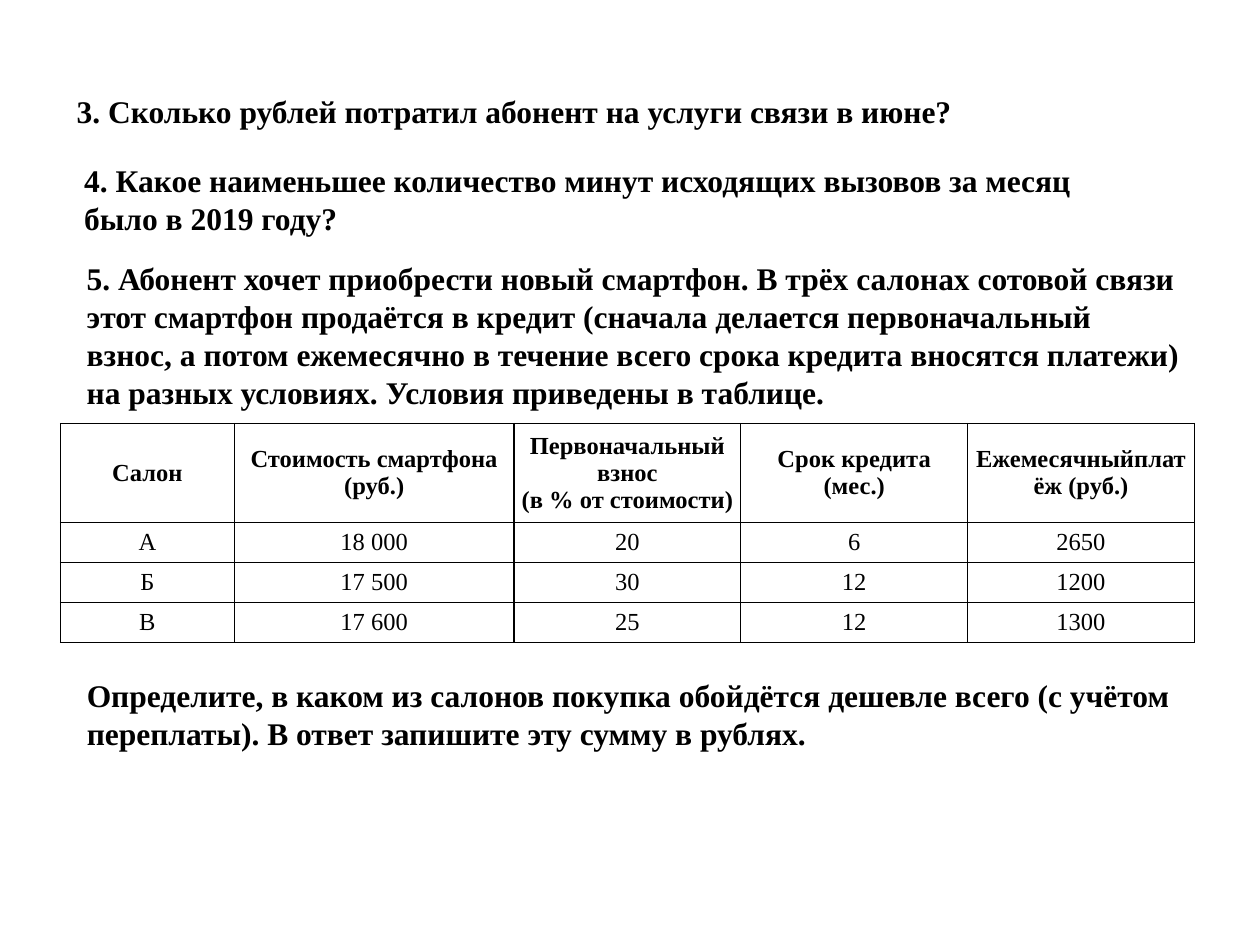
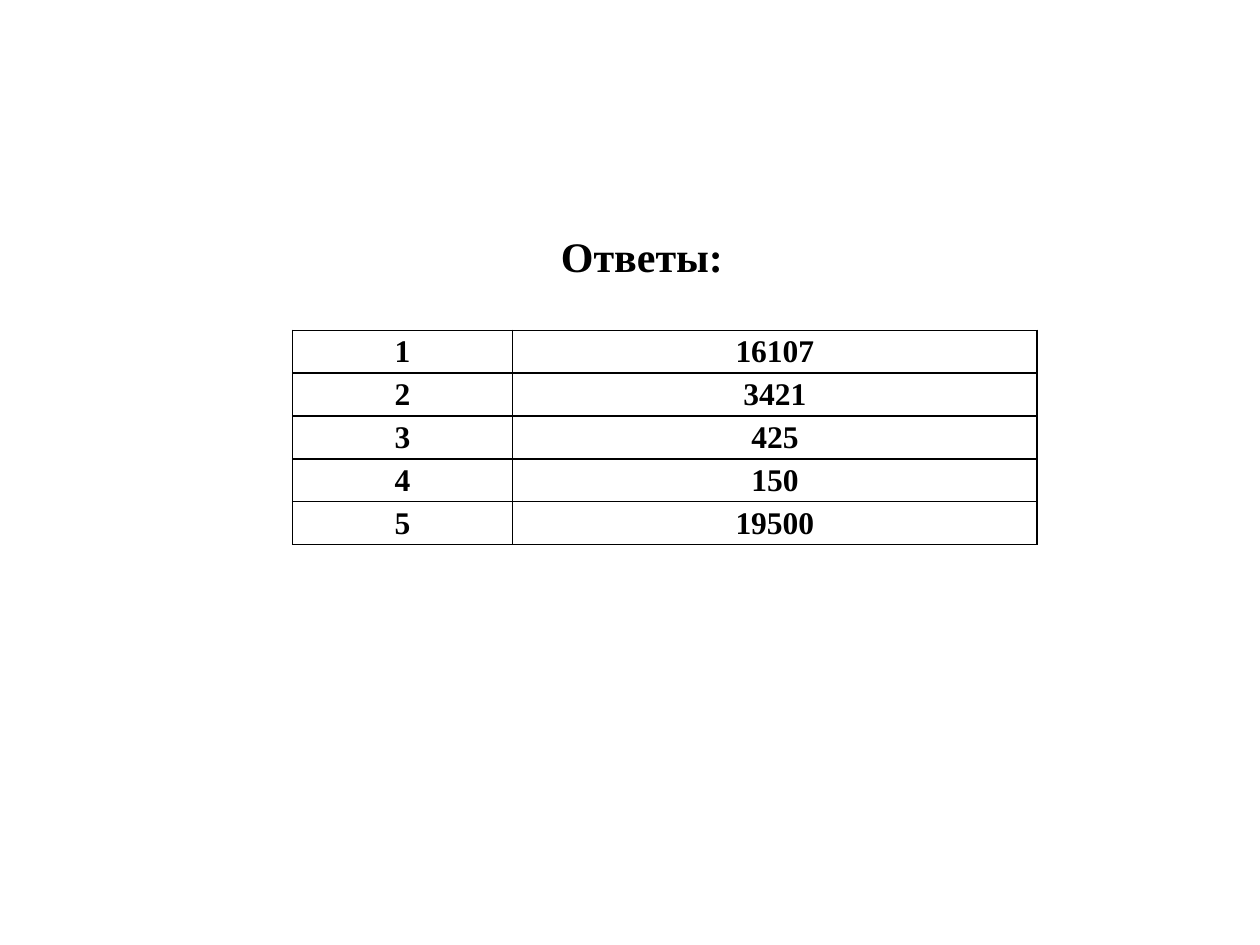
from dataclasses import dataclass

from lxml.etree import SubElement
from pptx import Presentation
from pptx.dml.color import RGBColor
from pptx.enum.text import MSO_ANCHOR as Anchor
from pptx.enum.text import MSO_AUTO_SIZE as AutoSize
from pptx.enum.text import PP_ALIGN as Align
from pptx.oxml.ns import qn
from pptx.util import Inches, Length, Pt

COLORS = {"ink": "000000", "paper": "FFFFFF"}
FONT = "Times New Roman"
SLIDE_WIDTH, SLIDE_HEIGHT = Inches(10), Inches(7.5)
TITLE_ONLY, BLANK = 5, 6
BORDER_WIDTH = Pt(0.75)


@dataclass(frozen=True)
class TextBlock:
    """Text with its place in percent of the slide's width and height."""
    text: str
    left: float
    top: float
    width: float
    height: float
    size: int = 18
    align: Align = Align.LEFT


@dataclass(frozen=True)
class Grid:
    """Table with its place, columns and rows in percent of the slide."""
    left: float
    top: float
    columns: list[float]
    row_heights: list[float]
    cells: list[list[str]]
    size: int
    inset: float
    bold_rows: int


QUESTIONS = [
    TextBlock("3. Сколько рублей потратил абонент на услуги связи в июне?",
              5.1, 9.07, 89, 5.33),
    TextBlock("4. Какое наименьшее количество минут исходящих вызовов за месяц "
              "было в 2019 году?", 5.7, 16.4, 85, 9.47),
    TextBlock("5. Абонент хочет приобрести новый смартфон. В трёх салонах сотовой "
              "связи этот смартфон продаётся в кредит (сначала делается "
              "первоначальный взнос, а потом ежемесячно в течение всего срока "
              "кредита вносятся платежи) на разных условиях. Условия приведены "
              "в таблице.", 5.9, 26.8, 89, 17.47),
    TextBlock("Определите, в каком из салонов покупка обойдётся дешевле всего "
              "(с учётом переплаты). В ответ запишите эту сумму в рублях.",
              5.9, 70.93, 89.8, 9.47),
]
LOAN_TERMS = Grid(
    4.8, 44.8, [13.8, 22.2, 18, 18, 18], [10.5] + [4.23] * 3,
    [["Салон", "Стоимость смартфона\v(руб.)",
      "Первоначальный взнос\v(в % от стоимости)",
      "Срок кредита\v(мес.)", "Ежемесячныйплатёж (руб.)"],
     ["А", "18 000", "20", "6", "2650"],
     ["Б", "17 500", "30", "12", "1200"],
     ["В", "17 600", "25", "12", "1300"]],
    size=14, inset=0.04, bold_rows=1)

ANSWERS_TITLE = TextBlock("Ответы:", 27.7, 23.73, 46.5, 6.67, 24, Align.CENTER)
ANSWERS = Grid(
    23.2, 34.93, [17.5, 41.6], [4.55] * 5,
    [[str(number), answer] for number, answer in
     enumerate(["16107", "3421", "425", "150", "19500"], start=1)],
    size=18, inset=0.02, bold_rows=5)


def across(percent: float) -> Length:
    return Length(round(SLIDE_WIDTH * percent / 100))


def down(percent: float) -> Length:
    return Length(round(SLIDE_HEIGHT * percent / 100))


def format_text(text_frame, size: int, bold: bool, align: Align) -> None:
    for paragraph in text_frame.paragraphs:
        paragraph.alignment = align
        for run in paragraph.runs:
            run.font.name = FONT
            run.font.size = Pt(size)
            run.font.bold = bold
            run.font.color.rgb = RGBColor.from_string(COLORS["ink"])


def place_text(shape, block: TextBlock) -> None:
    shape.left, shape.top = across(block.left), down(block.top)
    shape.width, shape.height = across(block.width), down(block.height)
    text_frame = shape.text_frame
    text_frame.word_wrap = True
    text_frame.auto_size = AutoSize.SHAPE_TO_FIT_TEXT
    text_frame.vertical_anchor = Anchor.TOP
    text_frame.text = block.text
    format_text(text_frame, block.size, True, block.align)


def add_borders(cell) -> None:
    properties = cell._tc.get_or_add_tcPr()
    for side in ("lnL", "lnR", "lnT", "lnB"):
        line = SubElement(properties, qn(f"a:{side}"), w=str(BORDER_WIDTH))
        fill = SubElement(line, qn("a:solidFill"))
        SubElement(fill, qn("a:srgbClr"), val=COLORS["ink"])


def add_grid(slide, grid: Grid) -> None:
    table = slide.shapes.add_table(
        len(grid.row_heights), len(grid.columns),
        across(grid.left), down(grid.top),
        across(sum(grid.columns)), down(sum(grid.row_heights))).table
    table.first_row = table.horz_banding = False
    for column, width in zip(table.columns, grid.columns):
        column.width = across(width)
    for row_index, (row, height) in enumerate(zip(table.rows, grid.row_heights)):
        row.height = down(height)
        for cell, text in zip(row.cells, grid.cells[row_index]):
            cell.margin_left = cell.margin_right = Inches(grid.inset)
            cell.margin_top = cell.margin_bottom = Inches(grid.inset)
            cell.vertical_anchor = Anchor.MIDDLE
            cell.text_frame.text = text
            format_text(cell.text_frame, grid.size,
                        row_index < grid.bold_rows, Align.CENTER)
            add_borders(cell)
            cell.fill.solid()
            cell.fill.fore_color.rgb = RGBColor.from_string(COLORS["paper"])


def add_questions_slide(presentation) -> None:
    slide = presentation.slides.add_slide(presentation.slide_layouts[BLANK])
    for question in QUESTIONS:
        place_text(slide.shapes.add_textbox(0, 0, 0, 0), question)
    add_grid(slide, LOAN_TERMS)


def add_answers_slide(presentation) -> None:
    slide = presentation.slides.add_slide(presentation.slide_layouts[TITLE_ONLY])
    place_text(slide.shapes.title, ANSWERS_TITLE)
    add_grid(slide, ANSWERS)


def main() -> None:
    presentation = Presentation()
    presentation.slide_width, presentation.slide_height = SLIDE_WIDTH, SLIDE_HEIGHT
    add_questions_slide(presentation)
    add_answers_slide(presentation)
    presentation.save("out.pptx")


if __name__ == "__main__":
    main()
